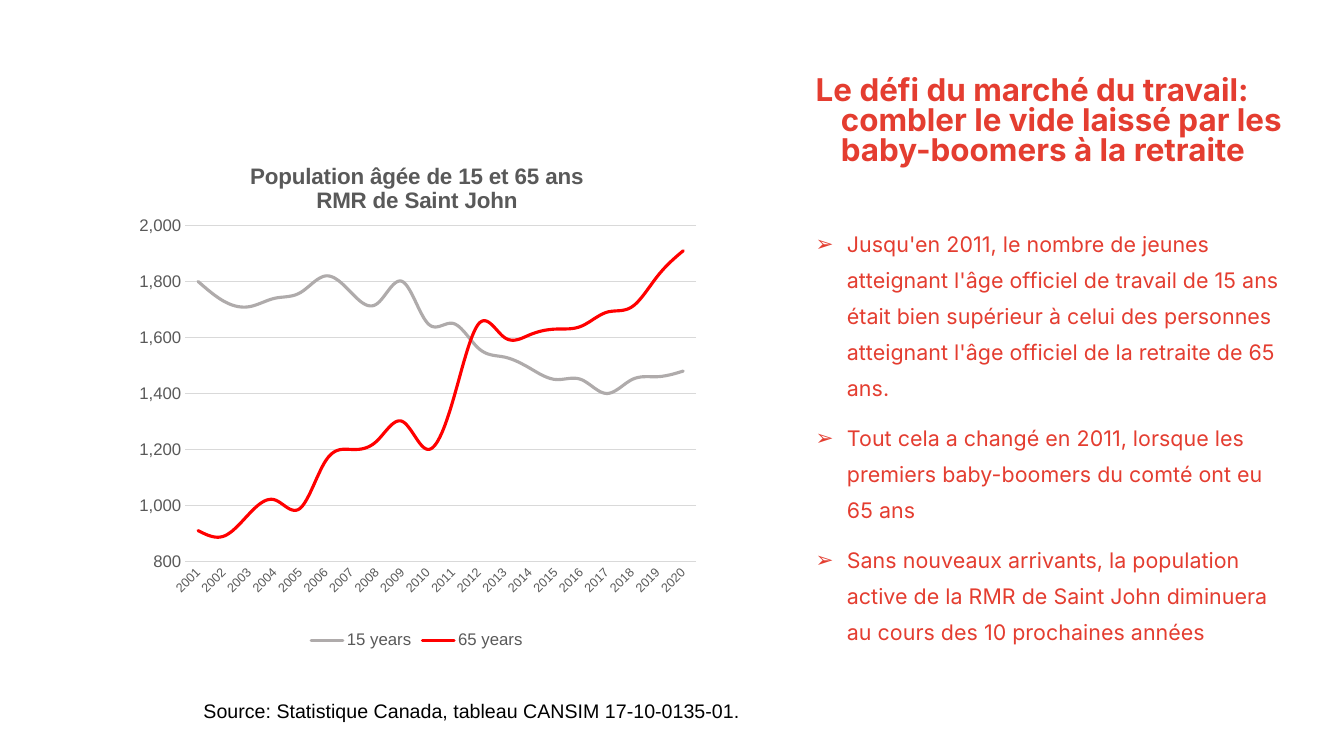
from lxml import etree
from pptx import Presentation
from pptx.chart.data import CategoryChartData
from pptx.dml.color import RGBColor
from pptx.enum.chart import XL_CHART_TYPE, XL_LEGEND_POSITION, XL_TICK_MARK
from pptx.enum.text import MSO_ANCHOR, MSO_AUTO_SIZE, PP_ALIGN
from pptx.oxml import parse_xml
from pptx.oxml.ns import nsdecls, qn
from pptx.util import Inches, Pt

RED = RGBColor(0xE4, 0x3D, 0x30)
LINE_RED = RGBColor(0xFF, 0x00, 0x00)
LINE_GRAY = RGBColor(0xAF, 0xAB, 0xAB)
GRID_GRAY = RGBColor(0xD9, 0xD9, 0xD9)
LABEL_GRAY = RGBColor(0x59, 0x59, 0x59)
BLACK = RGBColor(0, 0, 0)

HEADING = ("Le défi du marché du travail: combler le vide laissé par les "
           "baby-boomers à la retraite")
POINTS = [
    "Jusqu'en 2011, le nombre de jeunes atteignant l'âge officiel de travail "
    "de 15 ans était bien supérieur à celui des personnes atteignant l'âge "
    "officiel de la retraite de 65 ans.",
    "Tout cela a changé en 2011, lorsque les premiers baby-boomers du comté "
    "ont eu 65 ans",
    "Sans nouveaux arrivants, la population active de la RMR de Saint John "
    "diminuera au cours des 10 prochaines années",
]
SOURCE = "Source: Statistique Canada, tableau CANSIM 17-10-0135-01."
CHART_TITLE = ["Population âgée de 15 et 65 ans", "RMR de Saint John"]
YEARS = [str(year) for year in range(2001, 2021)]
SERIES = [
    ("15 years", LINE_GRAY,
     [1800, 1730, 1710, 1740, 1760, 1820, 1760, 1720, 1800, 1650,
      1650, 1560, 1530, 1490, 1450, 1450, 1400, 1450, 1460, 1480]),
    ("65 years", LINE_RED,
     [910, 890, 970, 1020, 990, 1160, 1200, 1230, 1300, 1200,
      1380, 1650, 1600, 1610, 1630, 1640, 1690, 1710, 1820, 1910]),
]


def set_font(font, size, color, name="Arial", bold=False):
    font.name, font.size, font.bold = name, Pt(size), bold
    font.color.rgb = color


def place(sp, left, top, width, height):
    sp.left, sp.top = Inches(left), Inches(top)
    sp.width, sp.height = Inches(width), Inches(height)


def set_indent(p, left, hanging):
    pPr = p._p.get_or_add_pPr()
    pPr.set("marL", str(Inches(left)))
    pPr.set("indent", str(-Inches(hanging)))
    return pPr


def add_bullet(pPr, char, color):
    clr = etree.SubElement(pPr, qn("a:buClr"))
    etree.SubElement(clr, qn("a:srgbClr"), val=str(color))
    etree.SubElement(pPr, qn("a:buFont"), typeface="Arial")
    etree.SubElement(pPr, qn("a:buChar"), char=char)


def fill_placeholder(sp, box, texts, size, spacing, indent, bullet=None, bold=False):
    place(sp, *box)
    tf = sp.text_frame
    tf.auto_size = MSO_AUTO_SIZE.NONE
    tf.vertical_anchor = MSO_ANCHOR.TOP
    for i, text in enumerate(texts):
        p = tf.add_paragraph() if i else tf.paragraphs[0]
        pPr = set_indent(p, *indent)
        if bullet:
            add_bullet(pPr, bullet, RED)
        p.alignment = PP_ALIGN.LEFT
        p.line_spacing = spacing
        p.space_before = Pt(10 if i else 0)
        r = p.add_run()
        r.text = text
        set_font(r.font, size, RED, "Inter", bold)


def add_source(s):
    tf = s.shapes.add_textbox(Inches(1.92), Inches(6.88),
                              Inches(9.36), Inches(0.34)).text_frame
    tf.word_wrap = True
    tf.auto_size = MSO_AUTO_SIZE.SHAPE_TO_FIT_TEXT
    r = tf.paragraphs[0].add_run()
    r.text = SOURCE
    set_font(r.font, 14, BLACK)


def add_chart_title(chart):
    tf = chart.chart_title.text_frame
    chart.chart_title.include_in_layout = False
    for i, line in enumerate(CHART_TITLE):
        p = tf.add_paragraph() if i else tf.paragraphs[0]
        r = p.add_run()
        r.text = line
        set_font(r.font, 16, LABEL_GRAY, bold=True)


def format_axes(chart):
    cat, val = chart.category_axis, chart.value_axis
    for axis, size in ((cat, 9), (val, 12)):
        axis.major_tick_mark = axis.minor_tick_mark = XL_TICK_MARK.NONE
        set_font(axis.tick_labels.font, size, LABEL_GRAY)
    cat._element.txPr.find(qn("a:bodyPr")).set("rot", str(-45 * 60000))
    val.format.line.fill.background()
    val.minimum_scale, val.maximum_scale, val.major_unit = 800, 2000, 200
    val.has_major_gridlines = True
    val.tick_labels.number_format = "#,##0"
    val.tick_labels.number_format_is_linked = False
    for line in (cat.format.line, val.major_gridlines.format.line):
        line.color.rgb, line.width = GRID_GRAY, Pt(0.75)


def set_plot_area(chart, x, y, w, h):
    plot_area = chart._chartSpace.chart.plotArea
    for old in plot_area.findall(qn("c:layout")):
        plot_area.remove(old)
    values = [("layoutTarget", "inner"), ("xMode", "edge"), ("yMode", "edge"),
              ("x", x), ("y", y), ("w", w), ("h", h)]
    items = "".join(f'<c:{tag} val="{val}"/>' for tag, val in values)
    plot_area.insert(0, parse_xml(
        f'<c:layout {nsdecls("c")}><c:manualLayout>{items}</c:manualLayout></c:layout>'))


def add_population_chart(s):
    data = CategoryChartData(number_format="#,##0")
    data.categories = YEARS
    for name, _, values in SERIES:
        data.add_series(name, values)
    chart = s.shapes.add_chart(XL_CHART_TYPE.LINE, Inches(1.19), Inches(1.43),
                               Inches(5.89), Inches(5.05), data).chart
    set_font(chart.font, 10, BLACK)
    add_chart_title(chart)
    format_axes(chart)
    set_plot_area(chart, 0.11, 0.16, 0.86, 0.66)
    chart.plots[0].vary_by_categories = False
    for series, (_, color, _) in zip(chart.plots[0].series, SERIES):
        series.smooth = True
        series.format.line.color.rgb = color
        series.format.line.width = Pt(2.25)
        series.format.line._get_or_add_ln().set("cap", "rnd")
    chart.has_legend = True
    chart.legend.position = XL_LEGEND_POSITION.BOTTOM
    chart.legend.include_in_layout = False
    set_font(chart.legend.font, 12, LABEL_GRAY)


def main():
    prs = Presentation()
    prs.slide_width, prs.slide_height = Inches(13.33), Inches(7.5)
    s = prs.slides.add_slide(prs.slide_layouts[1])
    fill_placeholder(s.shapes.title, (7.74, 0.72, 5.09, 1.3), [HEADING],
                     22.4, 0.8, (0.5, 0.25), bold=True)
    fill_placeholder(s.placeholders[1], (7.74, 2.14, 5.09, 4.47), POINTS,
                     15.3, 1.4, (0.56, 0.31), bullet="➢")
    add_source(s)
    add_population_chart(s)
    prs.save("out.pptx")


if __name__ == "__main__":
    main()
